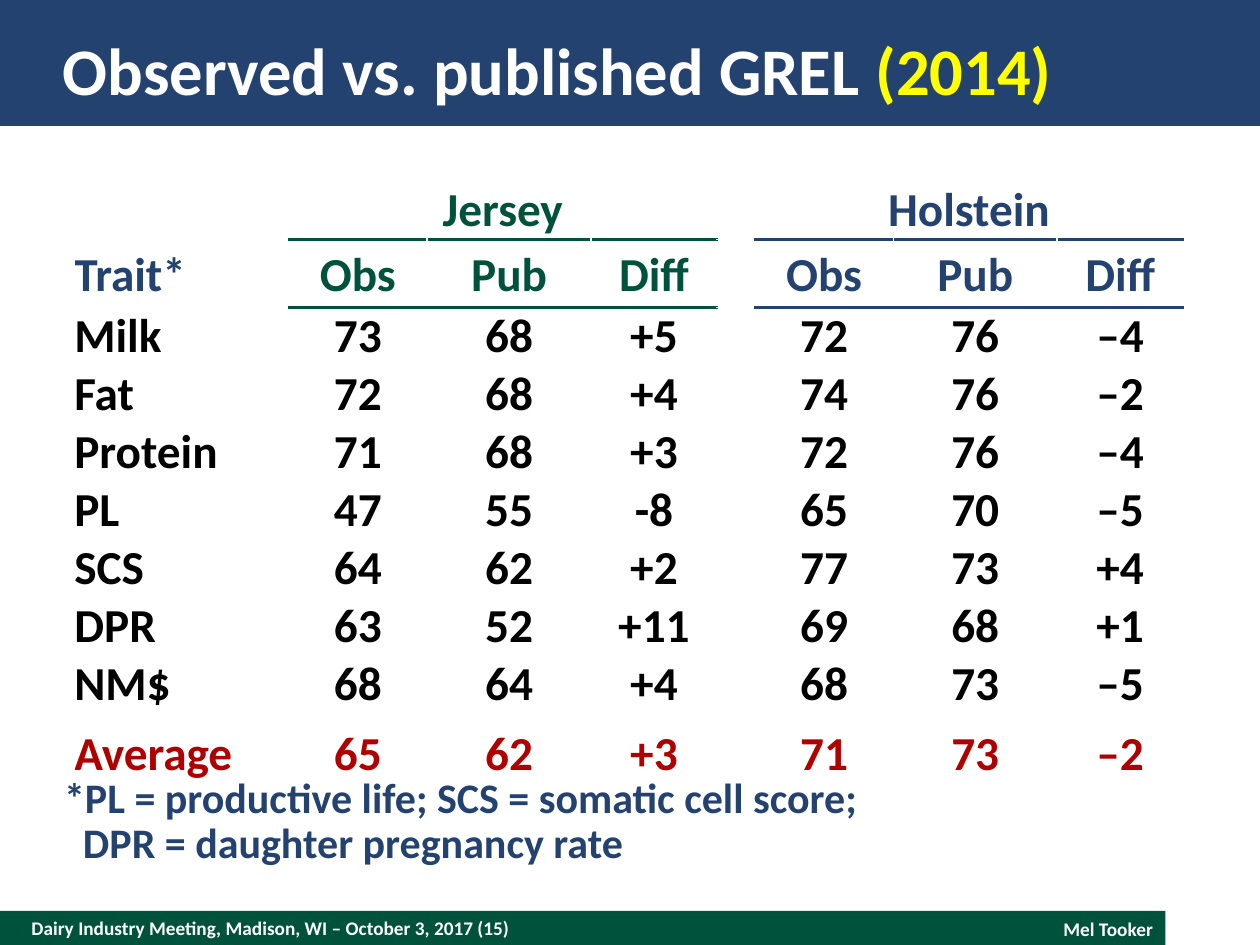
from lxml.etree import SubElement
from pptx import Presentation
from pptx.dml.color import RGBColor
from pptx.enum.shapes import MSO_SHAPE
from pptx.enum.text import MSO_ANCHOR, PP_ALIGN
from pptx.oxml.ns import qn
from pptx.util import Inches, Pt

COLORS = {"navy": "244270", "green": "00523C", "red": "B00000",
          "yellow": "FFFF00", "white": "FFFFFF", "black": "000000"}
FONT = "Calibri"

COL_WIDTHS = [1.7, 1.1, 1.3, 1, 0.3, 1.1, 1.3, 1]
ROW_HEIGHTS = [0.46, 0.54] + [0.46] * 7 + [0.56]
BREEDS = {1: ("Jersey", "green"), 5: ("Holstein", "navy")}
MEASURES = ["Obs", "Pub", "Diff"]
GAP_COL = 4
# Trait, then observed, published and difference for each breed
ROWS = [
    ["Milk", "73", "68", "+5", "72", "76", "–4"],
    ["Fat", "72", "68", "+4", "74", "76", "–2"],
    ["Protein", "71", "68", "+3", "72", "76", "–4"],
    ["PL", "47", "55", "-8", "65", "70", "–5"],
    ["SCS", "64", "62", "+2", "77", "73", "+4"],
    ["DPR", "63", "52", "+11", "69", "68", "+1"],
    ["NM$", "68", "64", "+4", "68", "73", "–5"],
    ["Average", "65", "62", "+3", "71", "73", "–2"],
]


def rgb(name):
    return RGBColor.from_string(COLORS[name])


def add_run(p, text, size, color):
    r = p.add_run()
    r.text = text
    for name, value in {"name": FONT, "size": Pt(size), "bold": True}.items():
        setattr(r.font, name, value)
    r.font.color.rgb = rgb(color)


def add_bar(s, left, top, width, height, color):
    sp = s.shapes.add_shape(MSO_SHAPE.RECTANGLE, Inches(left), Inches(top),
                            Inches(width), Inches(height))
    sp.shadow.inherit = False
    sp.fill.solid()
    sp.fill.fore_color.rgb = rgb(color)
    sp.line.fill.background()


def add_text(s, left, top, width, height, paragraphs, size, inset=True,
             align=PP_ALIGN.LEFT, spacing=None):
    """Each paragraph is a list of (text, color) runs."""
    sp = s.shapes.add_textbox(Inches(left), Inches(top), Inches(width), Inches(height))
    tf = sp.text_frame
    tf.word_wrap = True
    if not inset:
        tf.vertical_anchor = MSO_ANCHOR.MIDDLE
        for side in ("left", "top", "right", "bottom"):
            setattr(tf, f"margin_{side}", 0)
    for i, runs in enumerate(paragraphs):
        p = tf.add_paragraph() if i else tf.paragraphs[0]
        p.alignment = align
        if spacing:
            p.line_spacing = Pt(spacing)
        for text, color in runs:
            add_run(p, text, size, color)
    return tf


def set_borders(cell, top="white", bottom="white"):
    tcPr = cell._tc.get_or_add_tcPr()
    for tag, color in (("lnL", "white"), ("lnR", "white"), ("lnT", top), ("lnB", bottom)):
        width = Pt(1 if color == "white" else 2.25)
        ln = SubElement(tcPr, qn(f"a:{tag}"), w=str(int(width)))
        fill = SubElement(ln, qn("a:solidFill"))
        SubElement(fill, qn("a:srgbClr"), val=COLORS[color])


def fill_cell(cell, text, color, spacing, top=0, bottom=0, align=PP_ALIGN.CENTER):
    fmt = {"vertical_anchor": MSO_ANCHOR.BOTTOM, "margin_left": 0, "margin_right": 0,
           "margin_top": Inches(top), "margin_bottom": Inches(bottom)}
    for name, value in fmt.items():
        setattr(cell, name, value)
    p = cell.text_frame.paragraphs[0]
    p.alignment = align
    p.line_spacing = Pt(spacing)
    add_run(p, text, 27, color)


def add_trait_table(s):
    frame = s.shapes.add_table(len(ROW_HEIGHTS), len(COL_WIDTHS), Inches(0.59),
                               Inches(1.44), Inches(sum(COL_WIDTHS)),
                               Inches(sum(ROW_HEIGHTS)))
    table = frame.table
    table.first_row = table.horz_banding = False
    for col, width in zip(table.columns, COL_WIDTHS):
        col.width = Inches(width)
    for row, height in zip(table.rows, ROW_HEIGHTS):
        row.height = Inches(height)

    # Colored rules above and below the measure names
    rules = {start + i: color for start, (_, color) in BREEDS.items()
             for i in range(len(MEASURES))}
    for r in range(len(ROW_HEIGHTS)):
        for c in range(len(COL_WIDTHS)):
            cell = table.cell(r, c)
            color = rules.get(c, "white")
            set_borders(cell, top=color if r in (1, 2) else "white",
                        bottom=color if r in (0, 1) else "white")
            cell.fill.background()

    # Header rows
    fill_cell(table.cell(1, 0), "Trait*", "navy", 30, 0.03, 0.03, PP_ALIGN.LEFT)
    for start, (breed, color) in BREEDS.items():
        table.cell(0, start).merge(table.cell(0, start + 2))
        fill_cell(table.cell(0, start), breed, color, 30)
        for i, measure in enumerate(MEASURES):
            fill_cell(table.cell(1, start + i), measure, color, 30, 0.05, 0.03)

    # Trait rows, with the average set apart
    for r, values in enumerate(ROWS, start=2):
        average = values[0] == "Average"
        for i, value in enumerate(values):
            c = i if i < GAP_COL else i + 1
            fill_cell(table.cell(r, c), value, "red" if average else "black", 26,
                      top=0.1 if average else 0,
                      align=PP_ALIGN.CENTER if c else PP_ALIGN.LEFT)


def main():
    prs = Presentation()
    prs.slide_width, prs.slide_height = Inches(10), Inches(7.5)
    s = prs.slides.add_slide(prs.slide_layouts[6])

    # Footer and title bars
    add_bar(s, 0, 7.23, 9.25, 0.27, "green")
    add_bar(s, 0, 0, 10, 1, "navy")
    add_text(s, 0.25, 7.23, 6.5, 0.27,
             [[("Dairy Industry Meeting, Madison, WI – October 3, 2017 (15)", "white")]],
             11, inset=False)
    add_text(s, 7.25, 7.23, 2, 0.29, [[("Mel Tooker", "white")]], 11,
             align=PP_ALIGN.RIGHT)
    add_text(s, 0.5, 0.2, 9, 0.7,
             [[("Observed vs. published GREL ", "white"), ("(2014)", "yellow")]],
             38, inset=False)

    add_trait_table(s)

    # Footnote, second line indented past the asterisk
    tf = add_text(s, 0.41, 6.11, 8.52, 0.83,
                  [[("*PL = productive life; SCS = somatic cell score;", "navy")],
                   [("DPR = daughter pregnancy rate", "navy")]], 24, spacing=26)
    tf.paragraphs[1]._p.get_or_add_pPr().set("marL", str(int(Inches(0.15))))

    prs.save("out.pptx")


if __name__ == "__main__":
    main()
